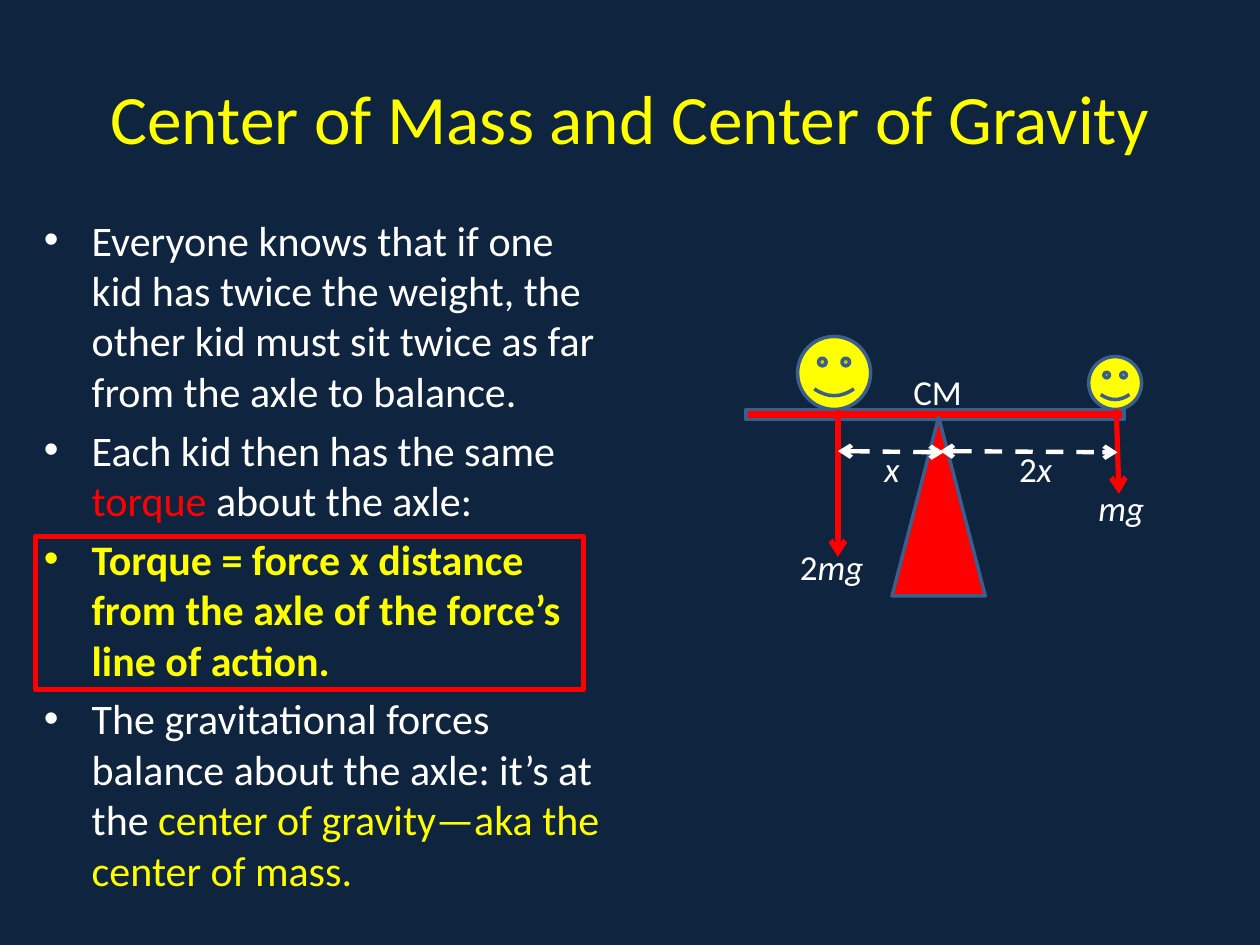
from lxml.etree import SubElement
from pptx import Presentation
from pptx.dml.color import RGBColor
from pptx.enum.dml import MSO_LINE
from pptx.enum.shapes import MSO_CONNECTOR, MSO_SHAPE
from pptx.enum.text import MSO_ANCHOR, PP_ALIGN
from pptx.oxml.ns import qn
from pptx.util import Inches, Pt

NAVY, YELLOW, RED, WHITE, STEEL = "0F243E", "FFFF00", "FF0000", "FFFFFF", "3A5F8C"


def color(value):
    """Turn a hex string into a colour."""
    return RGBColor.from_string(value)


def add_text(shapes, box, size, lines, anchor=MSO_ANCHOR.TOP):
    """Add a text box; each line is a list of (text, colour, bold, italic)."""
    frame = shapes.add_textbox(*map(Inches, box)).text_frame
    frame.word_wrap = True
    frame.vertical_anchor = anchor
    for index, parts in enumerate(lines):
        para = frame.add_paragraph() if index else frame.paragraphs[0]
        para.font.name = "Calibri"
        para.font.size = Pt(size)
        for text, tint, bold, italic in parts:
            span = para.add_run()
            span.text = text
            span.font.color.rgb = color(tint)
            span.font.bold = bold
            span.font.italic = italic
    return frame


def add_figure(shapes, kind, box, fill, line, width):
    """Add a preset shape with an optional fill."""
    shape = shapes.add_shape(kind, *map(Inches, box))
    shape.shadow.inherit = False
    if fill:
        shape.fill.solid()
        shape.fill.fore_color.rgb = color(fill)
    else:
        shape.fill.background()
    shape.line.color.rgb = color(line)
    shape.line.width = Pt(width)


def add_arrow(shapes, start, end, tint, width, both=False):
    """Add a solid one-way arrow or a dashed two-way one."""
    arrow = shapes.add_connector(MSO_CONNECTOR.STRAIGHT, *map(Inches, start + end))
    arrow.line.color.rgb = color(tint)
    arrow.line.width = Pt(width)
    if both:
        arrow.line.dash_style = MSO_LINE.DASH
    line = arrow.line._get_or_add_ln()
    for tag in ("a:headEnd", "a:tailEnd") if both else ("a:tailEnd",):
        SubElement(line, qn(tag), type="arrow")
    SubElement(arrow._element.spPr, qn("a:effectLst"))


def add_title(page, box):
    """Place the centred title."""
    text = "Center of Mass and Center of Gravity"
    frame = add_text(page.shapes, box, 39.6, [[(text, YELLOW, False, False)]], MSO_ANCHOR.MIDDLE)
    frame.paragraphs[0].alignment = PP_ALIGN.CENTER


def add_points(page, box):
    """Place the bullet list and the frame around its third point."""
    left, top, width, height = box
    lines = [
        [("Everyone knows that if one kid has twice the weight, the other kid must "
          "sit twice as far from the axle to balance.", WHITE, False, False)],
        [("Each kid then has the same ", WHITE, False, False),
         ("torque", RED, False, False),
         (" about the axle:", WHITE, False, False)],
        [("Torque = force x distance from the axle of the force’s line of action.",
          YELLOW, True, False)],
        [("The gravitational forces balance about the axle: it’s at the ", WHITE, False, False),
         ("center of gravity—aka the center of mass.", YELLOW, False, False)],
    ]
    frame = add_text(page.shapes, box, 24, lines)
    for para in frame.paragraphs:
        para.space_before = Pt(4.8)
        properties = para._p.get_or_add_pPr()
        properties.set("marL", str(Inches(0.38)))
        properties.set("indent", str(-Inches(0.38)))
        SubElement(properties, qn("a:buFont"), typeface="Arial")
        SubElement(properties, qn("a:buChar"), char="•")
    add_figure(page.shapes, MSO_SHAPE.RECTANGLE,
               (left + 0.03, top + 2.61, width - 0.32, 1.21), None, RED, 3)


def add_seesaw(page, box):
    """Place the seesaw with its riders, forces, distances and labels."""
    left, top, width, height = box
    plank = top + 0.58
    group = page.shapes.add_group_shape().shapes
    figures = [
        (MSO_SHAPE.RECTANGLE, (left, plank, width, 0.08), RED),
        (MSO_SHAPE.SMILEY_FACE, (left + 0.41, plank - 0.58, 0.58, 0.58), YELLOW),
        (MSO_SHAPE.SMILEY_FACE, (left + 2.72, plank - 0.42, 0.42, 0.42), YELLOW),
        (MSO_SHAPE.ISOSCELES_TRIANGLE, (left + 1.16, plank + 0.06, 0.74, height - 0.64), RED),
    ]
    for kind, place, fill in figures:
        add_figure(group, kind, place, fill, STEEL, 2)

    heavy, light, level = left + 0.73, left + 2.95, plank + 0.33
    add_arrow(group, (light - 0.01, plank), (light + 0.01, plank + 0.67), RED, 3)
    add_arrow(group, (heavy, plank), (heavy, plank + 1.17), RED, 3)
    for start, end in ((heavy, left + 1.57), (left + 1.54, light)):
        add_arrow(group, (start, level), (end, level + 0.01), WHITE, 2.5, both=True)

    labels = [
        (1.0, 0.83, 0.42, "", "x"),
        (0.33, 1.61, 0.83, "2", "mg"),
        (1.23, 0.22, 0.75, "CM", ""),
        (2.07, 0.83, 0.58, "2", "x"),
        (2.7, 1.14, 0.67, "", "mg"),
    ]
    for x, y, wide, upright, slanted in labels:
        parts = [(text, WHITE, False, italic)
                 for text, italic in ((upright, False), (slanted, True)) if text]
        add_text(page.shapes, (left + x, top + y, wide, 0.44), 20, [parts])


def main():
    """Build and save the deck."""
    deck = Presentation()
    deck.slide_width, deck.slide_height = Inches(10), Inches(7.5)
    page = deck.slides.add_slide(deck.slide_layouts[6])
    page.background.fill.solid()
    page.background.fill.fore_color.rgb = color(NAVY)
    add_title(page, (0.5, 0.3, 9, 1.25))
    add_points(page, (0.25, 1.65, 4.67, 5.58))
    add_seesaw(page, (5.92, 2.67, 3, 2.06))
    deck.save("out.pptx")


if __name__ == "__main__":
    main()
